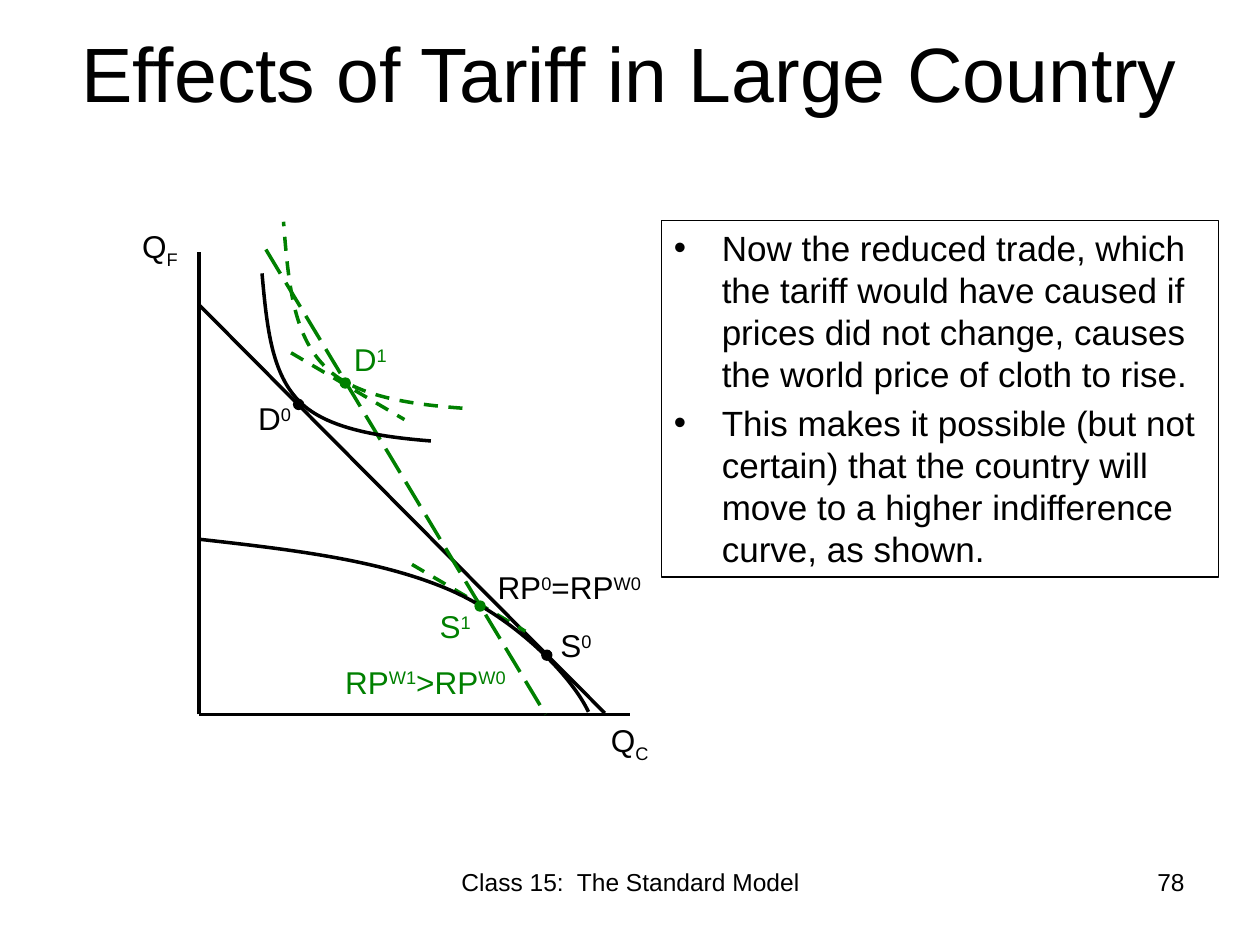
from pptx import Presentation
from pptx.dml.color import RGBColor
from pptx.enum.dml import MSO_LINE
from pptx.enum.shapes import MSO_CONNECTOR, MSO_SHAPE
from pptx.enum.text import PP_ALIGN
from pptx.oxml.ns import qn
from pptx.util import Emu, Pt
from lxml import etree

SCALE = 9144
BLACK, GREEN = "000000", "008000"
DASH, LONG_DASH = MSO_LINE.DASH, MSO_LINE.LONG_DASH
STRAIGHT, OVAL = MSO_CONNECTOR.STRAIGHT, MSO_SHAPE.OVAL
LEFT, CENTER, RIGHT = PP_ALIGN.LEFT, PP_ALIGN.CENTER, PP_ALIGN.RIGHT
SUB, SUPER = -25000, 30000


def px(length):
    return Emu(length * SCALE)


def add_text(bounds, paragraphs, size, color=BLACK, align=LEFT):
    box = page.shapes.add_textbox(*map(px, bounds))
    frame = box.text_frame
    frame.word_wrap = True
    frame.text = "\n".join("".join(text for text, _ in parts) for parts in paragraphs)
    for para, parts in zip(frame.paragraphs, paragraphs):
        para.alignment = align
        para.text = ""
        for text, baseline in parts:
            span = para.add_run()
            span.text = text
            span.font.size = Pt(size)
            span.font.name = "Arial"
            span.font.color.rgb = RGBColor.from_string(color)
            if baseline:
                span._r.get_or_add_rPr().set("baseline", str(baseline))
    return box


deck = Presentation()
deck.slide_width, deck.slide_height = px(1000), px(750)
page = deck.slides.add_slide(deck.slide_layouts[6])

for bounds, text, size, align in [
    ((50, 15, 900, 140), "Effects of Tariff in Large Country", 44, CENTER),
    ((342, 683, 317, 52), "Class 15:  The Standard Model", 14, CENTER),
    ((717, 683, 233, 52), "78", 14, RIGHT),
]:
    add_text(bounds, [[(text, 0)]], size, align=align)

effects_box = add_text((525, 175, 442, 283), [
    [("Now the reduced trade, which the tariff would have caused if prices did not "
      "change, causes the world price of cloth to rise.", 0)],
    [("This makes it possible (but not certain) that the country will move to a "
      "higher indifference curve, as shown.", 0)],
], 20)
effects_box.line.color.rgb = RGBColor.from_string(BLACK)
effects_box.line.width = Pt(0.75)
for para in effects_box.text_frame.paragraphs:
    para.space_before = Pt(4)
    para.line_spacing = Pt(24)
    properties = para._p.get_or_add_pPr()
    properties.set("marL", str(px(38)))
    properties.set("indent", str(px(-38)))
    etree.SubElement(properties, qn("a:buFont")).set("typeface", "Arial")
    etree.SubElement(properties, qn("a:buChar")).set("char", "•")

strokes = []
for start, end, color, dash in [
    ((158, 567), (500, 567), BLACK, None),
    ((158, 567), (158, 200), BLACK, None),
    ((158, 242), (480, 566), BLACK, None),
    ((211, 198), (433, 567), GREEN, LONG_DASH),
    ((327, 448), (417, 501), GREEN, DASH),
    ((231, 280), (321, 333), GREEN, DASH),
]:
    line = page.shapes.add_connector(STRAIGHT, *map(px, start + end))
    strokes.append((line, color, dash))

for knots, color, dash in [
    ([(158, 428), (229, 436), (299, 444), (354, 467),
      (409, 490), (454, 537), (467, 565)], BLACK, None),
    ([(342, 350), (304, 347), (260, 341), (238, 319),
      (216, 297), (212, 262), (208, 217)], BLACK, None),
    ([(367, 324), (327, 321), (280, 315), (257, 290),
      (233, 265), (229, 227), (225, 176)], GREEN, DASH),
]:
    builder = page.shapes.build_freeform(*knots[0], scale=SCALE)
    builder.add_line_segments(knots[1:], close=False)
    curve = builder.convert_to_shape()
    curve.fill.background()
    outline = next(curve._element.iter(qn("a:path")))
    segments = outline.findall(qn("a:lnTo"))
    for first in range(0, len(segments), 3):
        bezier = etree.SubElement(outline, qn("a:cubicBezTo"))
        for segment in segments[first:first + 3]:
            bezier.append(segment[0])
            outline.remove(segment)
    strokes.append((curve, color, dash))

for stroke, color, dash in strokes:
    stroke.line.color.rgb = RGBColor.from_string(color)
    stroke.line.width = Pt(2)
    stroke.line.dash_style = dash
    etree.SubElement(stroke._element.spPr, qn("a:effectLst"))

for left, top, color in [(233, 317, BLACK), (430, 516, BLACK),
                         (377, 477, GREEN), (270, 300, GREEN)]:
    dot = page.shapes.add_shape(OVAL, *map(px, (left, top, 8, 8)))
    dot.shadow.inherit = False
    dot.fill.solid()
    dot.fill.fore_color.rgb = RGBColor.from_string(color)
    dot.line.color.rgb = RGBColor.from_string(color)
    dot.line.width = Pt(0.75)

for bounds, color, parts in [
    ((475, 567, 75, 71), BLACK, [("Q", 0), ("C", SUB)]),
    ((103, 175, 75, 71), BLACK, [("Q", 0), ("F", SUB)]),
    ((435, 492, 47, 40), BLACK, [("S", 0), ("0", SUPER)]),
    ((195, 312, 48, 40), BLACK, [("D", 0), ("0", SUPER)]),
    ((339, 477, 47, 40), GREEN, [("S", 0), ("1", SUPER)]),
    ((271, 265, 48, 40), GREEN, [("D", 0), ("1", SUPER)]),
    ((385, 446, 149, 40), BLACK, [("RP", 0), ("0", SUPER), ("=RP", 0), ("W0", SUPER)]),
    ((264, 521, 169, 40), GREEN, [("RP", 0), ("W1", SUPER), (">RP", 0), ("W0", SUPER)]),
]:
    add_text(bounds, [parts], 18, color)

deck.save("out.pptx")
